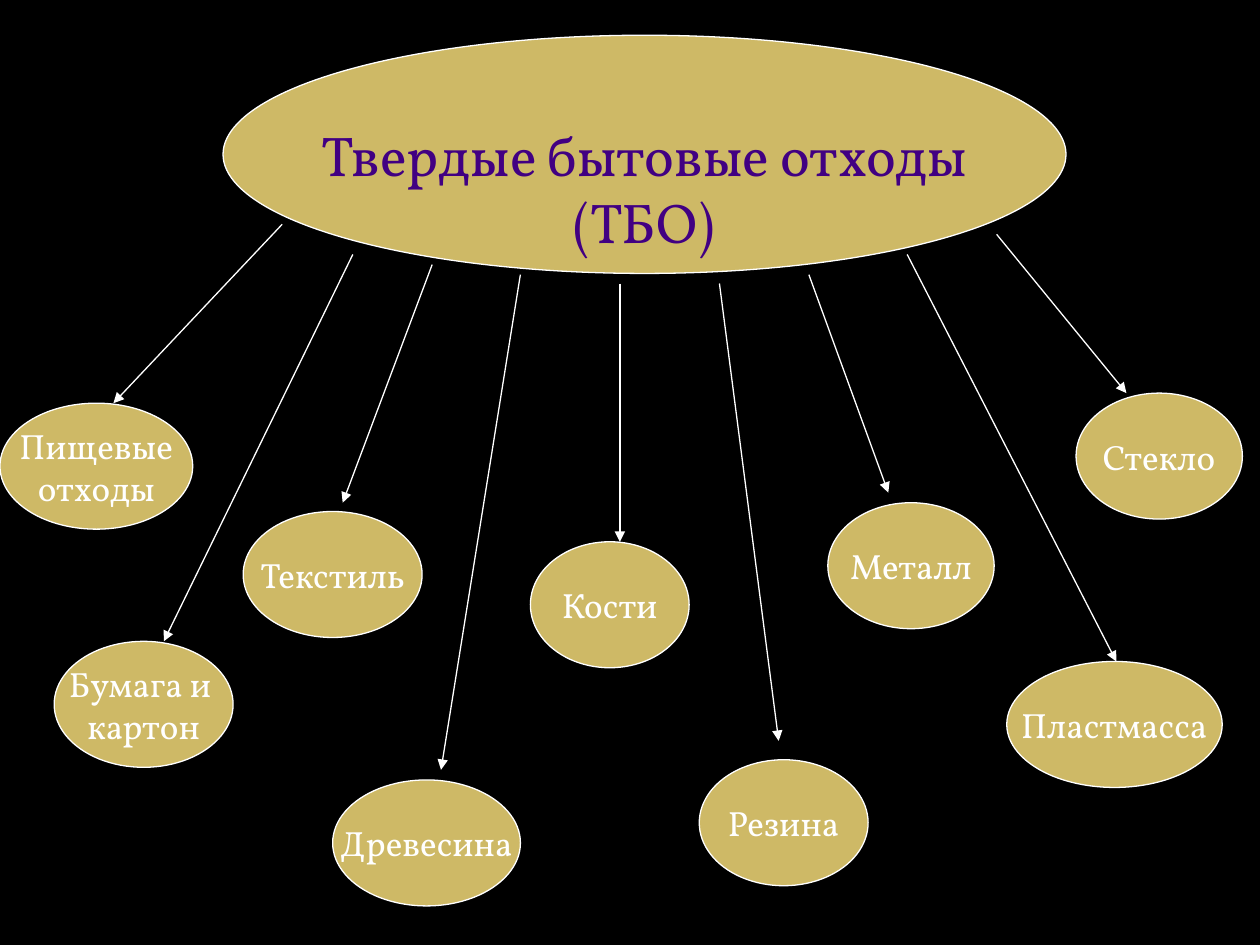
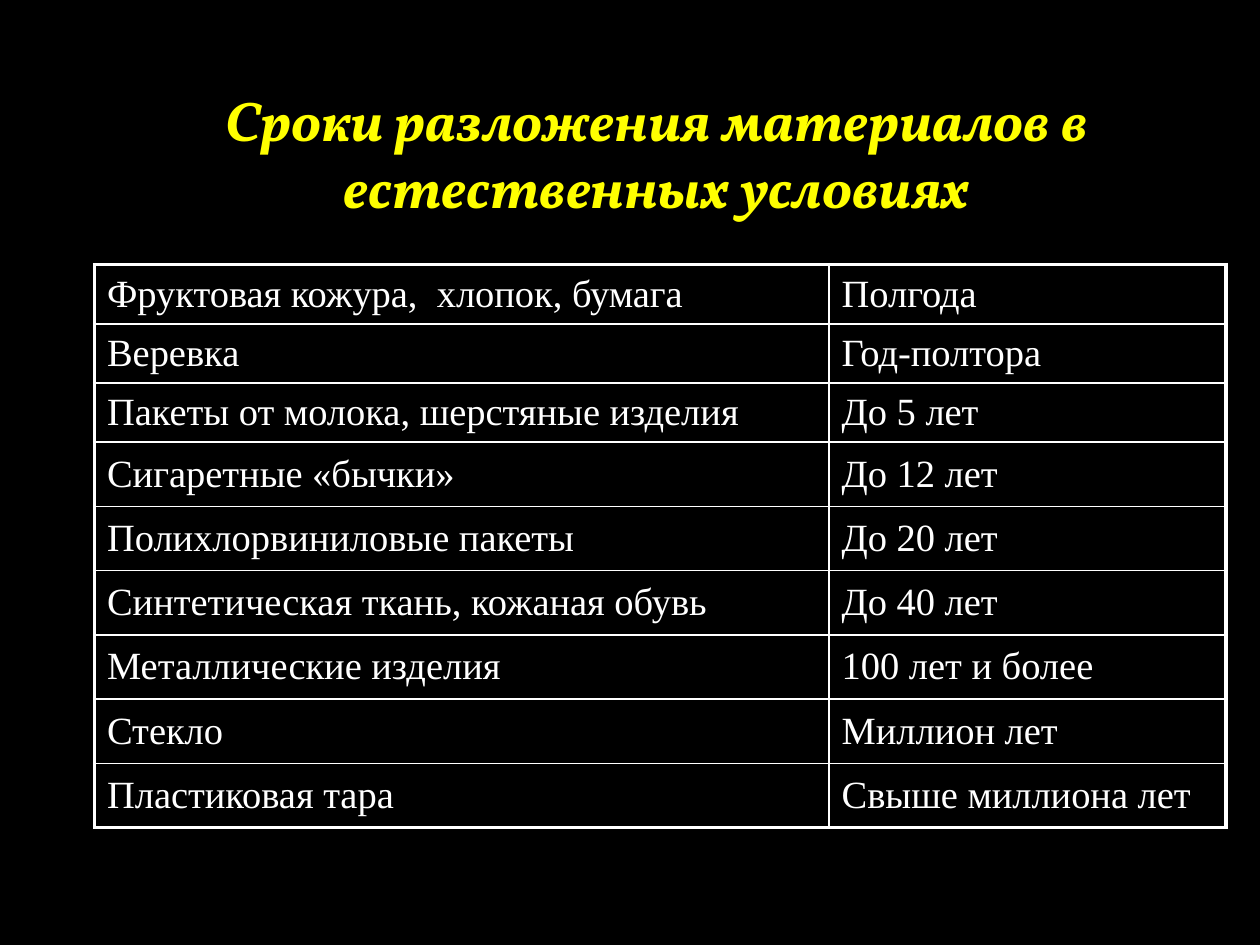
from dataclasses import dataclass

from lxml.etree import SubElement
from pptx import Presentation
from pptx.dml.color import RGBColor
from pptx.enum.shapes import MSO_CONNECTOR, MSO_SHAPE
from pptx.enum.text import MSO_ANCHOR, MSO_AUTO_SIZE, PP_ALIGN
from pptx.oxml import parse_xml
from pptx.oxml.ns import nsdecls, qn
from pptx.presentation import Presentation as Deck
from pptx.shapes.autoshape import Shape
from pptx.slide import Slide
from pptx.table import _Cell
from pptx.text.text import TextFrame
from pptx.util import Inches, Pt

COLORS = {
    "background": "000000",
    "line": "FFFFFF",
    "text": "FFFFFF",
    "oval": "CEB966",
    "topic": "410082",
    "title": "FFFF00",
}
DISPLAY_FONT = "Vollkorn"
TABLE_FONT = "Times New Roman"
OVAL_HEIGHT = 1
THIN, THICK = 1, 2.25


@dataclass(frozen=True)
class TextStyle:
    size: float
    color: str
    font: str = DISPLAY_FONT
    bold: bool = False
    italic: bool = False
    align: PP_ALIGN = PP_ALIGN.CENTER


@dataclass(frozen=True)
class Waste:
    lines: tuple[str, ...]
    left: float
    top: float
    width: float
    arrow_from: tuple[float, float]
    arrow_to: tuple[float, float]


TOPIC = TextStyle(32, "topic")
LABEL = TextStyle(20, "text")
TITLE = TextStyle(32, "title", bold=True, italic=True)
CELL = TextStyle(22, "text", font=TABLE_FONT, align=PP_ALIGN.LEFT)

WASTES = [
    Waste(("Пищевые", "отходы"), 0, 3.2, 1.53, (2.24, 1.78), (0.9, 3.2)),
    Waste(("Бумага и ", "картон"), 0.43, 5.09, 1.42, (2.8, 2.02), (1.3, 5.09)),
    Waste(("Текстиль",), 1.93, 4.06, 1.42, (3.43, 2.1), (2.72, 3.99)),
    Waste(("Древесина",), 2.64, 6.19, 1.49, (4.13, 2.18), (3.5, 6.11)),
    Waste(("Кости",), 4.21, 4.3, 1.26, (4.92, 2.25), (4.92, 4.3)),
    Waste(("Резина",), 5.55, 6.03, 1.34, (5.71, 2.25), (6.18, 5.88)),
    Waste(("Металл",), 6.57, 3.99, 1.32, (6.42, 2.18), (7.05, 3.91)),
    Waste(("Пластмасса",), 7.99, 5.25, 1.71, (7.2, 2.02), (8.86, 5.25)),
    Waste(("Стекло",), 8.54, 3.12, 1.32, (7.91, 1.86), (8.94, 3.12)),
]

COLUMN_WIDTHS = (5.83, 3.15)
ROW_HEIGHTS = (0.47,) * 3 + (0.51,) * 6
DECAY_TIMES = [
    ("Фруктовая кожура,  хлопок, бумага", "Полгода"),
    ("Веревка", "Год-полтора"),
    ("Пакеты от молока, шерстяные изделия", "До 5 лет"),
    ("Сигаретные «бычки»", "До 12 лет"),
    ("Полихлорвиниловые пакеты", "До 20 лет"),
    ("Синтетическая ткань, кожаная обувь", "До 40 лет"),
    ("Металлические изделия", "100 лет и более"),
    ("Стекло", "Миллион лет"),
    ("Пластиковая тара", "Свыше миллиона лет"),
]


def rgb(name: str) -> RGBColor:
    return RGBColor.from_string(COLORS[name])


def write(tf: TextFrame, lines: tuple[str, ...], style: TextStyle) -> None:
    for i, line in enumerate(lines):
        p = tf.add_paragraph() if i else tf.paragraphs[0]
        p.alignment = style.align
        r = p.add_run()
        r.text = line
        r.font.name = style.font
        r.font.size = Pt(style.size)
        r.font.bold = style.bold
        r.font.italic = style.italic
        r.font.color.rgb = rgb(style.color)


def add_slide(prs: Deck) -> Slide:
    s = prs.slides.add_slide(prs.slide_layouts[6])
    s.background.fill.solid()
    s.background.fill.fore_color.rgb = rgb("background")
    return s


def add_oval(s: Slide, left: float, top: float, width: float, height: float,
             lines: tuple[str, ...], style: TextStyle) -> Shape:
    sp = s.shapes.add_shape(MSO_SHAPE.OVAL, Inches(left), Inches(top),
                            Inches(width), Inches(height))
    sp.shadow.inherit = False
    sp.fill.solid()
    sp.fill.fore_color.rgb = rgb("oval")
    sp.line.color.rgb = rgb("line")
    sp.line.width = Pt(0.75)
    tf = sp.text_frame
    tf.word_wrap = False
    tf.vertical_anchor = MSO_ANCHOR.MIDDLE
    write(tf, lines, style)
    return sp


def add_arrow(s: Slide, start: tuple[float, float], end: tuple[float, float]) -> None:
    cx = s.shapes.add_connector(MSO_CONNECTOR.STRAIGHT,
                                *(Inches(v) for v in start + end))
    cx.line.color.rgb = rgb("line")
    cx.line.width = Pt(0.75)
    sp_pr = cx._element.spPr
    SubElement(sp_pr.find(qn("a:ln")), qn("a:tailEnd"), type="triangle")
    SubElement(sp_pr, qn("a:effectLst"))


def set_borders(cell: _Cell, widths: dict[str, float]) -> None:
    tc_pr = cell._tc.get_or_add_tcPr()
    for i, (side, width) in enumerate(widths.items()):
        tc_pr.insert(i, parse_xml(
            f'<a:ln{side} {nsdecls("a")} w="{Pt(width)}"><a:solidFill>'
            f'<a:srgbClr val="{COLORS["line"]}"/></a:solidFill></a:ln{side}>'))


def build_waste_map(prs: Deck) -> None:
    s = add_slide(prs)
    topic = add_oval(s, 1.77, 0.28, 6.69, 1.89,
                     ("Твердые бытовые отходы", "(ТБО)"), TOPIC)
    topic.text_frame.margin_top = Inches(0.58)
    for w in WASTES:
        add_oval(s, w.left, w.top, w.width, OVAL_HEIGHT, w.lines, LABEL)
    for w in WASTES:
        add_arrow(s, w.arrow_from, w.arrow_to)


def build_decay_table(prs: Deck) -> None:
    s = add_slide(prs)
    tf = s.shapes.add_textbox(Inches(1.22), Inches(0.63),
                              Inches(7.99), Inches(1.17)).text_frame
    tf.word_wrap = True
    tf.auto_size = MSO_AUTO_SIZE.SHAPE_TO_FIT_TEXT
    write(tf, ("Сроки разложения материалов в естественных условиях",), TITLE)

    rows, cols = len(DECAY_TIMES), len(COLUMN_WIDTHS)
    table = s.shapes.add_table(rows, cols, Inches(0.75), Inches(2.1),
                               Inches(sum(COLUMN_WIDTHS)),
                               Inches(sum(ROW_HEIGHTS))).table
    table.first_row = False
    table.horz_banding = False
    for column, width in zip(table.columns, COLUMN_WIDTHS):
        column.width = Inches(width)
    for row, height in zip(table.rows, ROW_HEIGHTS):
        row.height = Inches(height)
    for i, texts in enumerate(DECAY_TIMES):
        for j, text in enumerate(texts):
            cell = table.cell(i, j)
            cell.vertical_anchor = MSO_ANCHOR.MIDDLE
            cell.fill.background()
            write(cell.text_frame, (text,), CELL)
            outer = {"L": j == 0, "R": j == cols - 1,
                     "T": i == 0, "B": i == rows - 1}
            set_borders(cell, {side: THICK if edge else THIN
                               for side, edge in outer.items()})


def main() -> None:
    prs = Presentation()
    prs.slide_width, prs.slide_height = Inches(10), Inches(7.5)
    build_waste_map(prs)
    build_decay_table(prs)
    prs.save("out.pptx")


if __name__ == "__main__":
    main()
